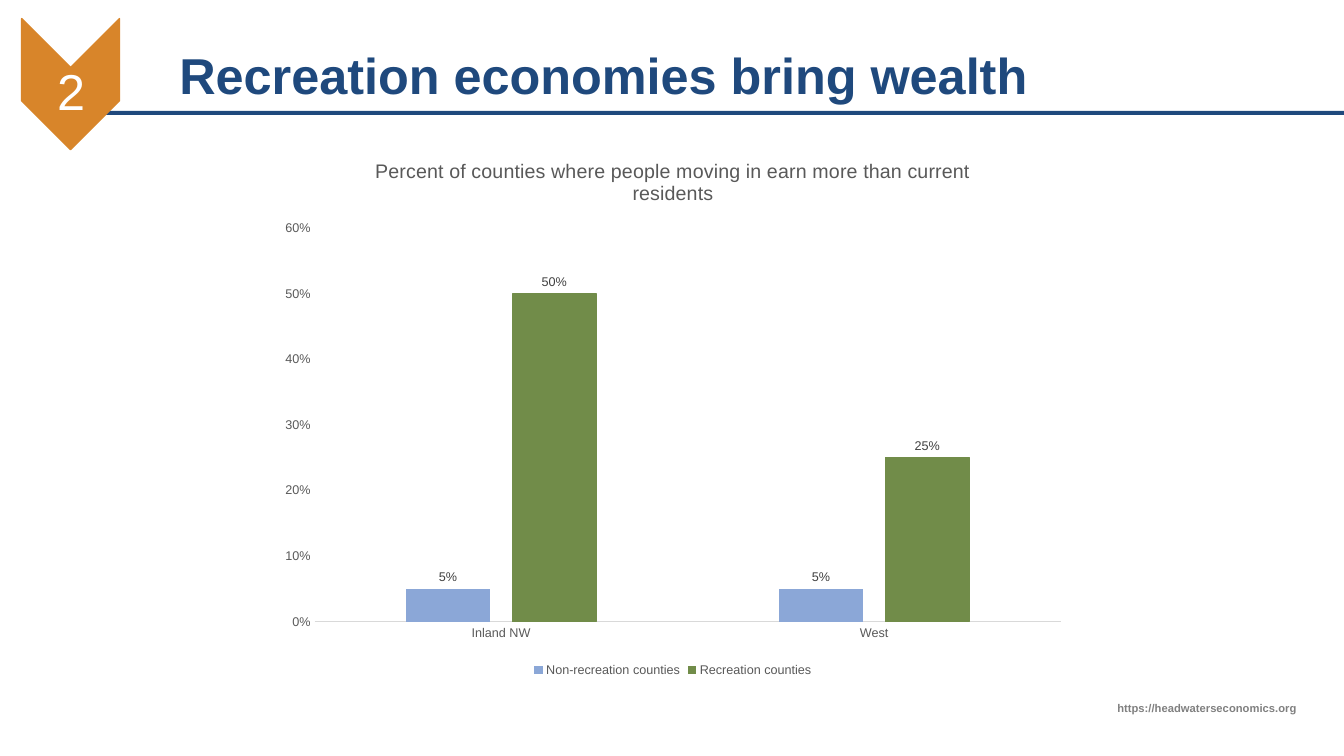
from dataclasses import dataclass

from lxml.etree import SubElement
from pptx import Presentation
from pptx.chart.data import CategoryChartData
from pptx.dml.color import RGBColor
from pptx.enum.chart import XL_CHART_TYPE as ChartType
from pptx.enum.chart import XL_LABEL_POSITION as LabelPosition
from pptx.enum.chart import XL_LEGEND_POSITION as LegendPosition
from pptx.enum.chart import XL_TICK_MARK as TickMark
from pptx.enum.shapes import MSO_SHAPE as Preset
from pptx.enum.text import MSO_ANCHOR as Anchor
from pptx.enum.text import PP_ALIGN as Align
from pptx.oxml.ns import qn
from pptx.util import Inches, Pt


@dataclass(frozen=True)
class Theme:
    font: str = "Arial"
    navy: str = "1F497D"
    orange: str = "D8852A"
    white: str = "FFFFFF"
    source_gray: str = "808080"
    chart_gray: str = "595959"
    label_gray: str = "404040"
    axis_gray: str = "D9D9D9"
    blue: str = "8BA7D7"
    green: str = "718C49"
    heading: int = 36
    chart_title: int = 14
    chart_text: int = 9
    source: int = 8


THEME = Theme()
PERCENT = "0%"


def style_font(font, size, color, bold=False):
    font.name = THEME.font
    font.size = Pt(size)
    font.bold = bold
    font.color.rgb = RGBColor.from_string(color)


def paint(target, color):
    target.fill.solid()
    target.fill.fore_color.rgb = RGBColor.from_string(color)


def add_block(slide, preset, box, color, outline=0, rotation=0):
    shape = slide.shapes.add_shape(preset, *map(Inches, box))
    shape.shadow.inherit = False
    shape.rotation = rotation
    paint(shape, color)
    if outline:
        shape.line.color.rgb = RGBColor.from_string(color)
        shape.line.width = Pt(outline)
    else:
        shape.line.fill.background()


def add_text(slide, text, box, size, color, bold=False, align=Align.LEFT,
             anchor=Anchor.TOP, spacing=1.0, inset=None):
    frame = slide.shapes.add_textbox(*map(Inches, box)).text_frame
    frame.word_wrap = True
    frame.vertical_anchor = anchor
    if inset is not None:
        frame.margin_left = frame.margin_right = Inches(inset)
        frame.margin_top = frame.margin_bottom = Inches(inset)
    paragraph = frame.paragraphs[0]
    paragraph.alignment = align
    paragraph.line_spacing = spacing
    run = paragraph.add_run()
    run.text = text
    style_font(run.font, size, color, bold)


def style_axis(axis):
    axis.has_major_gridlines = False
    axis.major_tick_mark = axis.minor_tick_mark = TickMark.NONE
    style_font(axis.tick_labels.font, THEME.chart_text, THEME.chart_gray)


def style_series(series, color):
    paint(series.format, color)
    series.format.line.color.rgb = RGBColor.from_string(color)
    series.format.line.width = Pt(0.75)
    labels = series.data_labels
    labels.show_value = True
    labels.number_format = PERCENT
    labels.number_format_is_linked = False
    labels.position = LabelPosition.OUTSIDE_END
    style_font(labels.font, THEME.chart_text, THEME.label_gray)


def add_chart_title(chart, text):
    chart.has_title = True
    title = chart.chart_title
    run = title.text_frame.paragraphs[0].add_run()
    run.text = text
    style_font(run.font, THEME.chart_title, THEME.chart_gray)
    title.include_in_layout = False


def add_column_chart(slide, box, title, categories, series):
    """Draw clustered columns; series holds (name, color, values) tuples."""
    data = CategoryChartData(number_format=PERCENT)
    data.categories = categories
    for name, _, values in series:
        data.add_series(name, values)
    chart = slide.shapes.add_chart(
        ChartType.COLUMN_CLUSTERED, *map(Inches, box), data).chart
    style_font(chart.font, THEME.chart_text, THEME.chart_gray)
    add_chart_title(chart, title)

    plot = chart.plots[0]
    plot.gap_width = 219
    plot.overlap = -27
    plot.vary_by_categories = False
    for column, (_, color, _) in zip(plot.series, series):
        style_series(column, color)

    style_axis(chart.category_axis)
    axis_line = chart.category_axis.format.line
    axis_line.color.rgb = RGBColor.from_string(THEME.axis_gray)
    axis_line.width = Pt(0.75)

    value_axis = chart.value_axis
    style_axis(value_axis)
    value_axis.format.line.fill.background()
    value_axis.minimum_scale, value_axis.maximum_scale = 0, 0.6
    value_axis.major_unit = 0.1
    value_axis.tick_labels.number_format = PERCENT
    value_axis.tick_labels.number_format_is_linked = False

    chart.has_legend = True
    chart.legend.position = LegendPosition.BOTTOM
    chart.legend.include_in_layout = False
    style_font(chart.legend.font, THEME.chart_text, THEME.chart_gray)


def set_background(slide, color):
    paint(slide.background, color)


def main():
    presentation = Presentation()
    presentation.slide_width = Inches(13.33)
    presentation.slide_height = Inches(7.5)
    slide = presentation.slides.add_slide(presentation.slide_layouts[6])
    set_background(slide, THEME.white)

    add_block(slide, Preset.RECTANGLE, (1, 1.1, 12.33, 0.04), THEME.navy)
    add_text(slide, "https://headwaterseconomics.org", (8.72, 6.91, 4.24, 0.24),
             THEME.source, THEME.source_gray, bold=True, align=Align.RIGHT)
    add_text(slide, "Recreation economies bring wealth", (1.68, 0.4, 10.74, 0.7),
             THEME.heading, THEME.navy, bold=True, anchor=Anchor.BOTTOM, spacing=0.9)

    add_block(slide, Preset.CHEVRON, (0.05, 0.35, 1.3, 0.97), THEME.orange,
              outline=1, rotation=90)
    add_text(slide, "2", (0.22, 0.74, 0.97, 0.39), THEME.heading, THEME.white,
             align=Align.CENTER, anchor=Anchor.MIDDLE, spacing=0.9, inset=0.03)

    add_column_chart(
        slide, (2.67, 1.37, 8.01, 5.39),
        "Percent of counties where people moving in earn more than current residents",
        ["Inland NW", "West"],
        [("Non-recreation counties", THEME.blue, (0.05, 0.05)),
         ("Recreation counties", THEME.green, (0.5, 0.25))])

    presentation.save("out.pptx")


if __name__ == "__main__":
    main()
